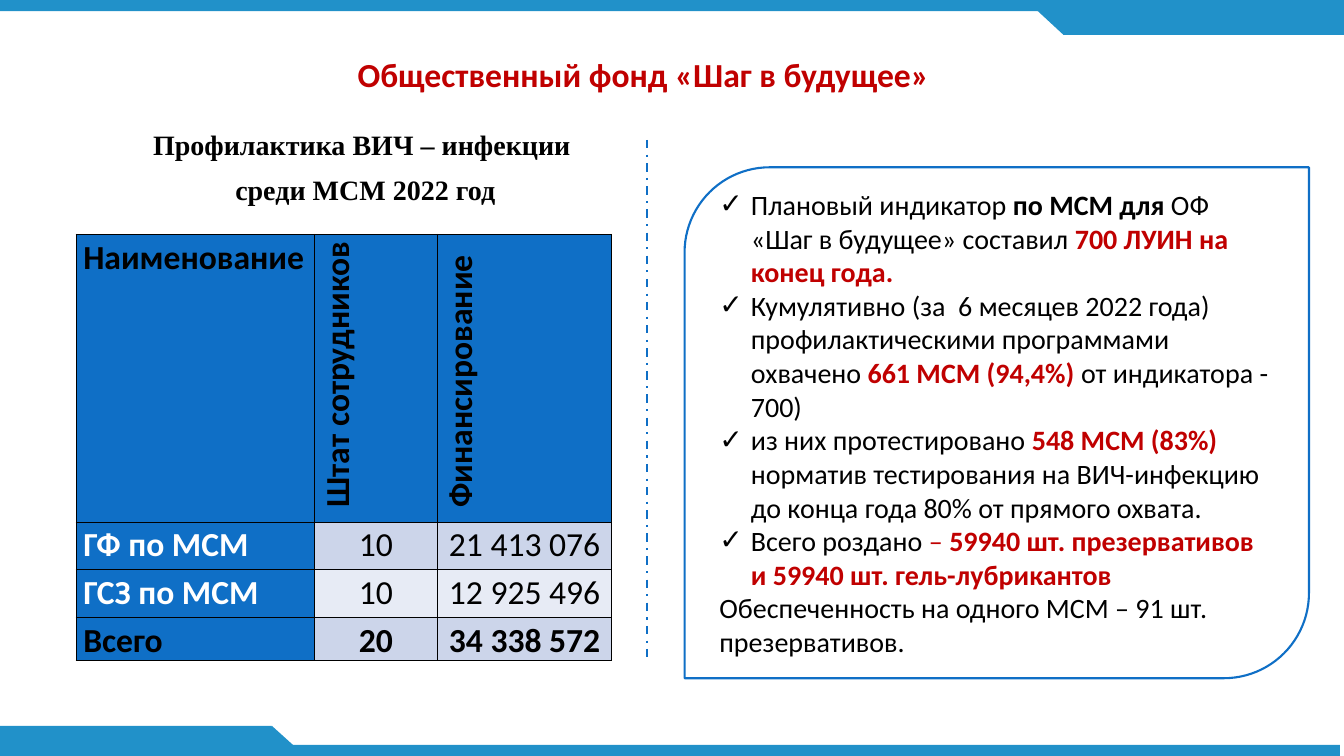
from lxml import etree
from pptx import Presentation
from pptx.dml.color import RGBColor
from pptx.enum.dml import MSO_LINE
from pptx.enum.shapes import MSO_CONNECTOR, MSO_SHAPE
from pptx.enum.text import MSO_ANCHOR, MSO_AUTO_SIZE, PP_ALIGN
from pptx.oxml.ns import qn
from pptx.util import Pt

LEFT, CENTER = PP_ALIGN.LEFT, PP_ALIGN.CENTER
TOP, MIDDLE = MSO_ANCHOR.TOP, MSO_ANCHOR.MIDDLE
RECT, MERGE = MSO_SHAPE.RECTANGLE, MSO_SHAPE.FLOWCHART_MERGE
PANEL = MSO_SHAPE.ROUND_2_DIAG_RECTANGLE

COLORS = {
    "bar": "2191C9", "blue": "0F6FC6", "red": "C00000", "black": "000000",
    "white": "FFFFFF", "band": "CCD5EA", "light": "E7EBF5",
}

TITLE = "Общественный фонд «Шаг в будущее» "
SUBTITLE = ["Профилактика ВИЧ – инфекции ", "среди МСМ 2022 год"]
TABLE = [
    ["Наименование", "Штат сотрудников", "Финансирование"],
    ["ГФ по МСМ", "10", "21 413 076"],
    ["ГСЗ по МСМ", "10", "12 925 496"],
    ["Всего", "20", "34 338 572"],
]
COL_WIDTHS = [170, 88, 124.5]
ROW_HEIGHTS = [205.5, 34, 34, 30.5]
ROW_FILLS = ["blue", "band", "light", "band"]

PLAIN, BOLD = {}, {"bold": True}
RED, RED_BOLD = {"color": "red"}, {"color": "red", "bold": True}
BULLETS = [
    [("Плановый индикатор ", PLAIN), ("по МСМ для ", BOLD),
     ("ОФ «Шаг в будущее» составил ", PLAIN),
     ("700 ЛУИН на конец года.", RED_BOLD)],
    [("Кумулятивно (за  6 месяцев 2022 года) профилактическими программами охвачено ", PLAIN),
     ("661 МСМ (94,4%) ", RED_BOLD), ("от индикатора - 700)", PLAIN)],
    [("из них протестировано ", PLAIN), ("548 МСМ (83%) ", RED_BOLD),
     ("норматив тестирования на ВИЧ-инфекцию до конца года 80% от прямого охвата.", PLAIN)],
    [("Всего роздано ", PLAIN), ("– ", RED),
     ("59940 шт. презервативов и 59940 шт. гель-лубрикантов", RED_BOLD)],
]
SUMMARY = "Обеспеченность на одного МСМ – 91 шт. презервативов."

BARS = [
    (RECT, 0, 0, 960, 8, 0),
    (RECT, -3, 532, 960, 8, 0),
    (RECT, 759.5, 3.5, 200.5, 21.5, 0),
    (MERGE, 736, 3, 47.5, 22, 0),
    (RECT, -6, 518.5, 200, 21.5, 0),
    (MERGE, 170.5, 518.5, 47.5, 21.5, 180),
]


def rgb(name):
    return RGBColor.from_string(COLORS[name])


def add_text(p, text, size=20, font="Calibri", color="black", bold=False, align=LEFT):
    p.alignment = align
    r = p.add_run()
    r.text = text
    r.font.size = Pt(size)
    r.font.name = font
    r.font.bold = bold
    r.font.color.rgb = rgb(color)


def add_shape(s, kind, x, y, w, h, fill, line=None):
    sp = s.shapes.add_shape(kind, Pt(x), Pt(y), Pt(w), Pt(h))
    sp.shadow.inherit = False
    sp.fill.solid()
    sp.fill.fore_color.rgb = rgb(fill)
    if line:
        sp.line.color.rgb = rgb(line)
        sp.line.width = Pt(1.5)
    else:
        sp.line.fill.background()
    return sp


def add_check(p):
    pPr = p._p.get_or_add_pPr()
    pPr.set("marL", str(Pt(22.5)))
    pPr.set("indent", str(-Pt(22.5)))
    etree.SubElement(pPr, qn("a:buFont"), typeface="Calibri")
    etree.SubElement(pPr, qn("a:buChar"), char="✓")


def add_borders(cell):
    tcPr = cell._tc.get_or_add_tcPr()
    for side in ("lnL", "lnR", "lnT", "lnB"):
        ln = etree.SubElement(tcPr, qn("a:" + side), w=str(Pt(1)))
        fill = etree.SubElement(ln, qn("a:solidFill"))
        etree.SubElement(fill, qn("a:srgbClr"), val=COLORS["black"])


def add_staff_table(s):
    frame = s.shapes.add_table(len(TABLE), len(COL_WIDTHS), Pt(54.5), Pt(167.5),
                               Pt(sum(COL_WIDTHS)), Pt(sum(ROW_HEIGHTS)))
    table = frame.table
    for column, width in zip(table.columns, COL_WIDTHS):
        column.width = Pt(width)
    for row, height in zip(table.rows, ROW_HEIGHTS):
        row.height = Pt(height)
    last = len(TABLE) - 1
    for i, values in enumerate(TABLE):
        for j, value in enumerate(values):
            cell = table.cell(i, j)
            cell.margin_left = cell.margin_right = Pt(5)
            cell.margin_top = cell.margin_bottom = 0
            add_borders(cell)
            cell.fill.solid()
            cell.fill.fore_color.rgb = rgb(ROW_FILLS[i] if j else "blue")
            p = cell.text_frame.paragraphs[0]
            p.line_spacing = 1.07
            if i == 0 and j:
                cell._tc.get_or_add_tcPr().set("vert", "vert270")
                p._p.get_or_add_pPr().set("marL", str(Pt(5.65)))
            add_text(p, value, size=24, bold=j == 0 or i in (0, last),
                     color="white" if j == 0 and 0 < i < last else "black",
                     align=CENTER if i and j else LEFT)


def add_results(s):
    sp = add_shape(s, PANEL, 489, 119.5, 446, 365, "white", "blue")
    tf = sp.text_frame
    tf.word_wrap = True
    tf.vertical_anchor = MIDDLE
    for i, runs in enumerate(BULLETS):
        p = tf.add_paragraph() if i else tf.paragraphs[0]
        add_check(p)
        for text, style in runs:
            add_text(p, text, **style)
    add_text(tf.add_paragraph(), SUMMARY)


def main():
    prs = Presentation()
    prs.slide_width, prs.slide_height = Pt(960), Pt(540)
    s = prs.slides.add_slide(prs.slide_layouts[5])

    for kind, x, y, w, h, angle in BARS:
        add_shape(s, kind, x, y, w, h, "bar").rotation = angle

    title = s.shapes.title
    title.left, title.top, title.width, title.height = Pt(230), Pt(35), Pt(464.5), Pt(36)
    tf = title.text_frame
    tf.auto_size = MSO_AUTO_SIZE.NONE
    tf.word_wrap = True
    tf.vertical_anchor = TOP
    add_text(tf.paragraphs[0], TITLE, size=24, color="red", bold=True, align=CENTER)

    tf = s.shapes.add_textbox(Pt(101), Pt(87.5), Pt(320), Pt(64)).text_frame
    tf.word_wrap = False
    for i, text in enumerate(SUBTITLE):
        p = tf.add_paragraph() if i else tf.paragraphs[0]
        p.space_after = Pt(8)
        add_text(p, text, font="Times New Roman", bold=True, align=CENTER)

    add_staff_table(s)

    divider = s.shapes.add_connector(MSO_CONNECTOR.STRAIGHT, Pt(462), Pt(100), Pt(462), Pt(472))
    divider.line.color.rgb = rgb("blue")
    divider.line.width = Pt(1.5)
    divider.line.dash_style = MSO_LINE.DASH_DOT
    etree.SubElement(divider._element.spPr, qn("a:effectLst"))

    add_results(s)
    prs.save("out.pptx")


if __name__ == "__main__":
    main()
